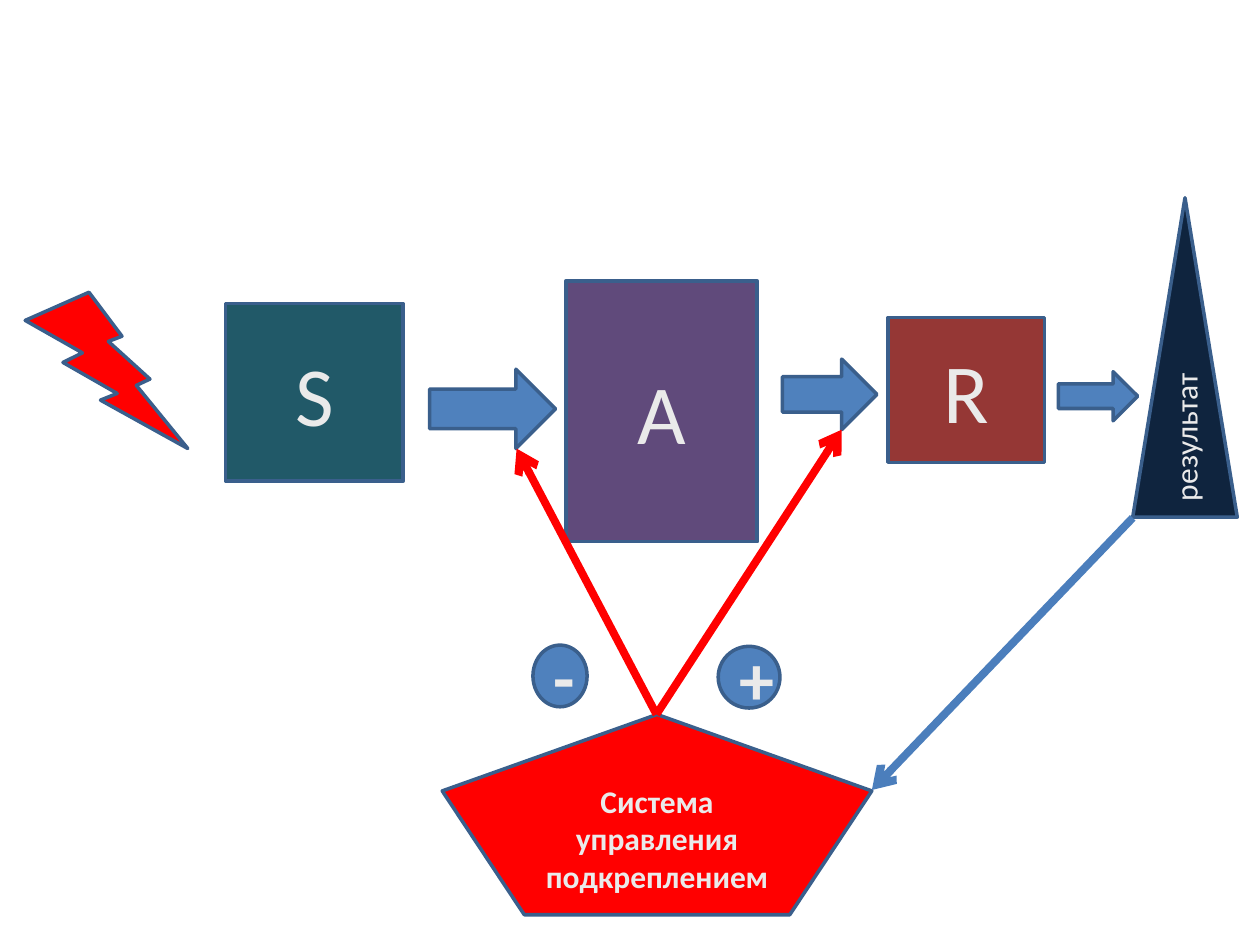
import pptx
import pptx.dml.color
import pptx.enum.shapes
import pptx.enum.text
import pptx.oxml.ns
import pptx.util
from lxml import etree

SHAPE = pptx.enum.shapes.MSO_SHAPE
SLIDE_WIDTH = pptx.util.Inches(10)
SLIDE_HEIGHT = pptx.util.Inches(7.5)
BACKGROUND = "FFFFFF"
OUTLINE = "3A5F8C"
BLUE = "4F81BD"
RED = "FF0000"
TEXT = "EAEAEA"


def color(hex_code):
    """Turn a hex string into a colour."""
    return pptx.dml.color.RGBColor.from_string(hex_code)


def across(percent):
    """Give a share of the slide's width."""
    return round(SLIDE_WIDTH * percent / 100)


def down(percent):
    """Give a share of the slide's height."""
    return round(SLIDE_HEIGHT * percent / 100)


def add_figure(slide, preset, place, fill):
    """Add an outlined preset shape placed in percent of the slide."""
    left, top, width, height = place
    figure = slide.shapes.add_shape(
        preset, across(left), down(top), across(width), down(height))
    figure.shadow.inherit = False
    figure.fill.solid()
    figure.fill.fore_color.rgb = color(fill)
    figure.line.color.rgb = color(OUTLINE)
    figure.line.width = pptx.util.Pt(2)
    return figure


def add_label(figure, wording, size, bold=False):
    """Write centred text inside a figure."""
    frame = figure.text_frame
    frame.word_wrap = True
    frame.vertical_anchor = pptx.enum.text.MSO_ANCHOR.MIDDLE
    paragraph = frame.paragraphs[0]
    paragraph.text = wording
    paragraph.alignment = pptx.enum.text.PP_ALIGN.CENTER
    paragraph.font.name = "Calibri"
    paragraph.font.size = pptx.util.Pt(size)
    paragraph.font.bold = bold
    paragraph.font.color.rgb = color(TEXT)


def turn_label(figure):
    """Make a figure's text run upwards."""
    figure.text_frame._txBody.bodyPr.set("vert", "vert270")


def add_link(slide, start, end, stroke):
    """Add a thick line with an open arrowhead at its end."""
    link = slide.shapes.add_connector(
        pptx.enum.shapes.MSO_CONNECTOR.STRAIGHT,
        across(start[0]), down(start[1]), across(end[0]), down(end[1]))
    link.line.color.rgb = color(stroke)
    link.line.width = pptx.util.Pt(4.5)
    qn = pptx.oxml.ns.qn
    etree.SubElement(link.line._get_or_add_ln(), qn("a:tailEnd"), type="arrow")
    etree.SubElement(link._element.spPr, qn("a:effectLst"))


def main():
    """Build the reinforcement diagram."""
    deck = pptx.Presentation()
    deck.slide_width, deck.slide_height = SLIDE_WIDTH, SLIDE_HEIGHT
    slide = deck.slides.add_slide(deck.slide_layouts[6])
    slide.background.fill.solid()
    slide.background.fill.fore_color.rgb = color(BACKGROUND)

    for letter, place, fill in (
        ("S", (17.9, 32.13, 14.1, 18.8), "215968"),
        ("A", (44.9, 29.73, 15.2, 27.6), "604A7B"),
        ("R", (70.5, 33.6, 12.4, 15.33), "953735"),
    ):
        add_label(add_figure(slide, SHAPE.RECTANGLE, place, fill), letter, 48)

    for place in ((34.1, 39.07, 10, 8.4), (62.1, 38, 7.5, 7.47)):
        add_figure(slide, SHAPE.RIGHT_ARROW, place, BLUE)

    add_figure(slide, SHAPE.LIGHTNING_BOLT, (2, 30.93, 12.9, 16.53), RED)
    result = add_figure(
        slide, SHAPE.ISOSCELES_TRIANGLE, (89.9, 20.93, 8.3, 33.8), "0F243E")
    add_label(result, "результат", 18)
    turn_label(result)
    add_figure(slide, SHAPE.RIGHT_ARROW, (84, 39.33, 6.3, 5.2), BLUE)

    control = add_figure(
        slide, SHAPE.REGULAR_PENTAGON, (35.1, 75.6, 34.1, 21.2), RED)
    add_label(control, "Система управления подкреплением", 18, bold=True)

    control_top = (52.1, 75.6)
    add_link(slide, (89.9, 54.8), (69.2, 83.6), "4B7EBC")
    for arrow_corner in ((66.8, 45.47), (41, 47.47)):
        add_link(slide, control_top, arrow_corner, RED)

    for sign, place in (
        ("-", (42.3, 68.27, 4.3, 6.53)),
        ("+", (57, 68.4, 4.9, 6.53)),
    ):
        add_label(add_figure(slide, SHAPE.OVAL, place, BLUE), sign, 40, bold=True)

    deck.save("out.pptx")


if __name__ == "__main__":
    main()
